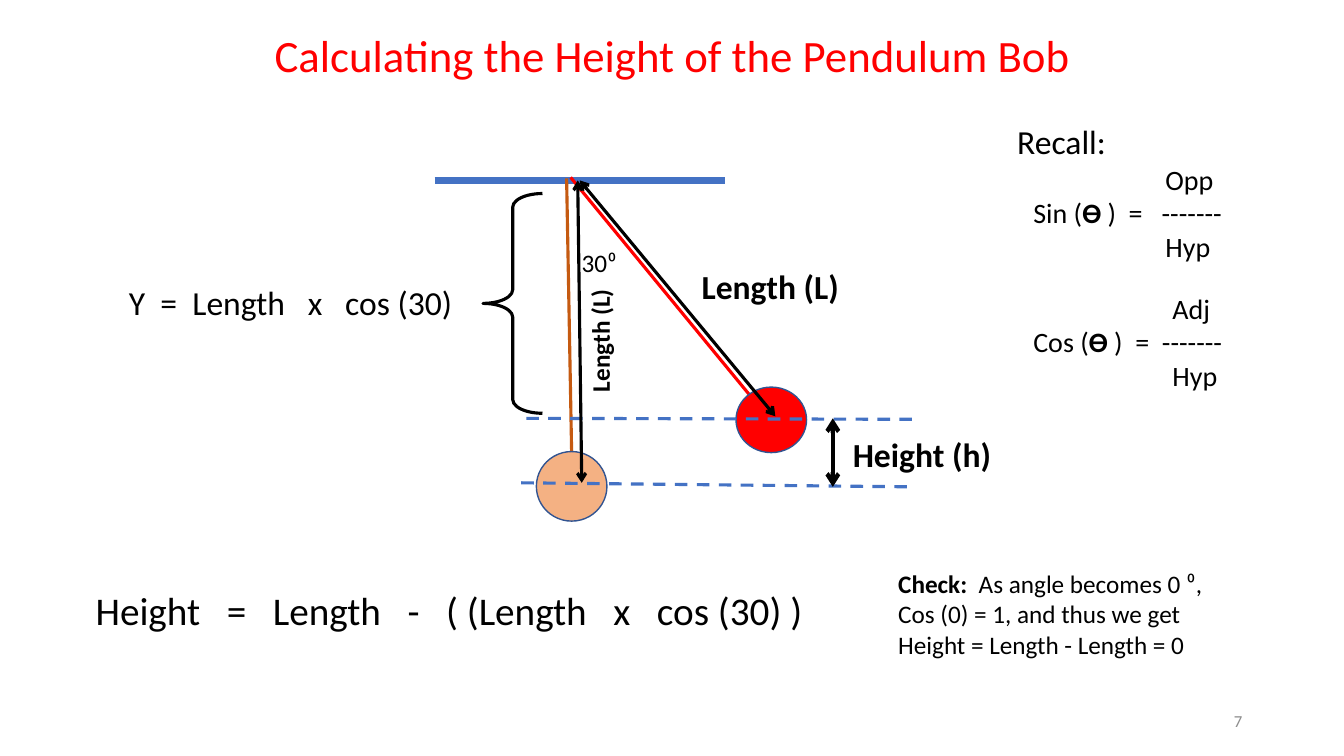
from dataclasses import dataclass

from lxml.etree import SubElement
from pptx import Presentation
from pptx.dml.color import RGBColor
from pptx.enum.dml import MSO_LINE_DASH_STYLE as DASH
from pptx.enum.shapes import MSO_CONNECTOR as CONN, MSO_SHAPE as SHAPE
from pptx.enum.text import MSO_ANCHOR as ANCHOR, PP_ALIGN as ALIGN
from pptx.oxml.ns import qn
from pptx.util import Inches, Pt


@dataclass(frozen=True)
class Theme:
    """Colours, type sizes and line widths of the slide."""
    font: str = "Calibri"
    ink: str = "000000"
    red: str = "FF0000"
    blue: str = "4472C4"
    outline: str = "325491"
    rod: str = "C55A11"
    rest_bob: str = "F4B183"
    grey: str = "8C8C8C"
    title: int = 32
    formula: int = 28
    label: int = 24
    ratio: int = 20
    small: int = 18
    page: int = 12
    thin: float = 1
    medium: float = 2.25
    thick: float = 3
    support: float = 4.5


T = Theme()


def rgb(value):
    """Turn a hex string into a colour."""
    return RGBColor.from_string(value)


def add_text(shapes, box, paras, size, color=T.ink, align=ALIGN.LEFT, indents=()):
    """Add a text box; each paragraph is a list of (text, bold) runs."""
    tb = shapes.add_textbox(*map(Inches, box))
    tf = tb.text_frame
    tf.word_wrap = True
    for i, runs in enumerate(paras):
        p = tf.paragraphs[0] if i == 0 else tf.add_paragraph()
        p.alignment = align
        if indents:
            p._p.get_or_add_pPr().set("marL", str(Inches(indents[i])))
        for text, bold in runs:
            r = p.add_run()
            r.text = text
            r.font.name, r.font.size, r.font.bold = T.font, Pt(size), bold
            r.font.color.rgb = rgb(color)
    return tb


def add_line(shapes, start, end, color, width, dashed=False, arrows=False):
    """Add a straight line, optionally dashed or with an arrow at both ends."""
    c = shapes.add_connector(CONN.STRAIGHT, *map(Inches, (*start, *end)))
    c.line.color.rgb = rgb(color)
    c.line.width = Pt(width)
    if dashed:
        c.line.dash_style = DASH.DASH
    if arrows:
        for tag in ("a:headEnd", "a:tailEnd"):
            SubElement(c.line._get_or_add_ln(), qn(tag)).set("type", "arrow")
    SubElement(c._element.spPr, qn("a:effectLst"))


def add_preset(shapes, kind, box, line, width, fill=None):
    """Add a preset shape without shadow."""
    sp = shapes.add_shape(kind, *map(Inches, box))
    sp.shadow.inherit = False
    if fill:
        sp.fill.solid()
        sp.fill.fore_color.rgb = rgb(fill)
    else:
        sp.fill.background()
    sp.line.color.rgb = rgb(line)
    sp.line.width = Pt(width)
    return sp


def add_title(s, box):
    """Place the centred title."""
    runs = [("Calculating the Height of the Pendulum Bob", False)]
    add_text(s.shapes, box, [runs], T.title, T.red, ALIGN.CENTER)


def add_recall(s, box):
    """Place the two trigonometric ratios under their heading."""
    x, y, w, h = box
    add_text(s.shapes, (x, y, w, 0.5), [[("Recall:", False)]], T.label)
    ratios = [("Sin (", " )  =   -------", "Opp", 1.31),
              ("Cos (", " )  =  -------", "Adj", 1.38)]
    for i, (name, rule, top, indent) in enumerate(ratios):
        paras = [[(top, False)],
                 [(name, False), ("ϴ", True), (rule, False)],
                 [("Hyp", False)]]
        ratio_box = (x + 0.16, y + 0.41 + i * 1.28, w, 1.11)
        add_text(s.shapes, ratio_box, paras, T.ratio, indents=(indent, 0, indent))


def add_pendulum(s, box):
    """Draw the pendulum at rest and raised, with its measures."""
    x, y, w, h = box
    g = s.shapes.add_group_shape().shapes

    def at(dx, dy, *size):
        return (x + dx, y + dy, *size)

    def line(start, end, color, width=T.medium, **kw):
        add_line(g, at(*start), at(*end), color, width, **kw)

    def label(frame, text, size, bold=True):
        return add_text(g, at(*frame), [[(text, bold)]], size)

    def bob(frame, fill):
        add_preset(g, SHAPE.OVAL, at(*frame), T.outline, T.thin, fill)

    line((3.13, 0.03), (6.01, 0.03), T.blue, T.support)
    line((4.48, 0), (6.47, 2.42), T.red)
    bob((6.12, 2.08, 0.7, 0.65), T.red)
    line((4.44, 0.01), (4.49, 2.74), T.rod)
    bob((4.14, 2.72, 0.7, 0.69), T.rest_bob)
    line((4.04, 2.39), (7.88, 2.4), T.blue, dashed=True)
    line((3.99, 3.03), (7.88, 3.07), T.blue, dashed=True)
    label((7.18, 2.5, 1.95, 0.5), "Height (h)", T.label)
    line((4.57, 0.03), (6.51, 2.37), T.ink, arrows=True)
    label((5.68, 0.83, 1.95, 0.5), "Length (L)", T.label)
    label((4.05, 1.31, 1.44, 0.4), "Length (L)", T.small).rotation = 270
    line((4.55, 0.03), (4.59, 3.03), T.ink, arrows=True)
    label((4.49, 0.64, 0.55, 0.4), "30⁰", T.small, False)
    brace = add_preset(g, SHAPE.LEFT_BRACE, at(3.61, 0.16, 0.59, 2.18), T.ink, T.medium)
    brace.adjustments[0] = 0.23
    label((0, 0.99, 3.41, 0.5), "Y  =  Length   x   cos (30)", T.label, False)
    line((7.08, 2.39), (7.08, 3.07), T.ink, T.thick, arrows=True)


def add_formula(s, box):
    """Place the height formula."""
    runs = [("Height   =   Length   -   ( (Length   x   cos (30) )", False)]
    add_text(s.shapes, box, [runs], T.formula)


def add_check(s, box):
    """Place the check of the limiting case."""
    paras = [[("Check:  ", True), ("As angle becomes 0 ⁰,", False)],
             [("Cos (0) = 1, and thus we get Height = Length - Length = 0", False)]]
    add_text(s.shapes, box, paras, T.small)


def add_page_number(s, box):
    """Place the page number."""
    tb = add_text(s.shapes, box, [[("7", False)]], T.page, T.grey, ALIGN.RIGHT)
    tb.text_frame.vertical_anchor = ANCHOR.MIDDLE


def main():
    """Build and save the slide."""
    prs = Presentation()
    prs.slide_width, prs.slide_height = Inches(13.33), Inches(7.5)
    s = prs.slides.add_slide(prs.slide_layouts[6])
    add_page_number(s, (9.42, 6.95, 3, 0.4))
    add_title(s, (2.43, 0.23, 8.48, 0.64))
    add_recall(s, (9.99, 1.15, 2.15, 2.8))
    add_pendulum(s, (1.18, 1.76, 9.13, 3.41))
    add_formula(s, (0.85, 5.77, 7.45, 0.57))
    add_check(s, (8.81, 5.59, 3.55, 1.01))
    prs.save("out.pptx")


if __name__ == "__main__":
    main()
